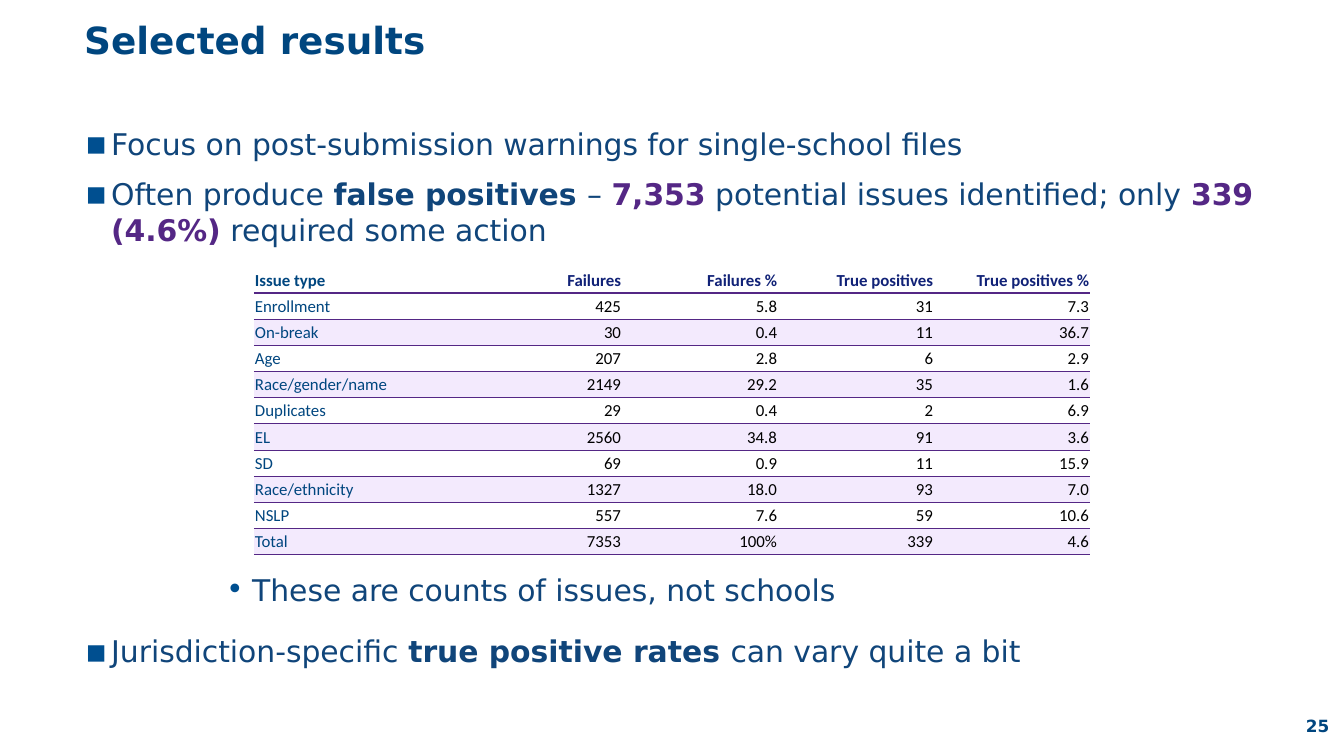
from lxml.etree import SubElement
from pptx import Presentation
from pptx.dml.color import RGBColor
from pptx.enum.text import MSO_ANCHOR, PP_ALIGN
from pptx.oxml.ns import qn
from pptx.util import Pt

PX = 914400 / 134.4
COLORS = {"title": "00467F", "body": "10457A", "accent": "542785", "bullet": "004F90",
          "header": "112277", "number": "000000", "plain": "FFFFFF", "band": "F3EAFD"}
BODY_FONT, TABLE_FONT = "DejaVu Sans", "Calibri"

# Bullet styles: character, size in percent, left indent in px
SQUARE = ("▪", 110, 35)
DOT = ("•", 100, 176)
HANGING = 26

# Each bullet: style, space before in points, runs of (text, bold, colour)
BULLETS = [
    (SQUARE, 0, [("Focus on post-submission warnings for single-school files", False, "body")]),
    (SQUARE, 7.5, [("Often produce ", False, "body"), ("false positives ", True, "body"),
                   ("– ", False, "body"), ("7,353", True, "accent"),
                   (" potential issues identified; only ", False, "body"),
                   ("339 (4.6%)", True, "accent"),
                   (" required some action", False, "body")]),
    (DOT, 174, [("These are counts of issues, not schools", False, "body")]),
    (SQUARE, 13.5, [("Jurisdiction-specific ", False, "body"),
                    ("true positive rates ", True, "body"),
                    ("can vary quite a bit", False, "body")]),
]

ISSUES = [
    ("Issue type", "Failures", "Failures %", "True positives", "True positives %"),
    ("Enrollment", "425", "5.8", "31", "7.3"),
    ("On-break", "30", "0.4", "11", "36.7"),
    ("Age", "207", "2.8", "6", "2.9"),
    ("Race/gender/name", "2149", "29.2", "35", "1.6"),
    ("Duplicates", "29", "0.4", "2", "6.9"),
    ("EL", "2560", "34.8", "91", "3.6"),
    ("SD", "69", "0.9", "11", "15.9"),
    ("Race/ethnicity", "1327", "18.0", "93", "7.0"),
    ("NSLP", "557", "7.6", "59", "10.6"),
    ("Total", "7353", "100%", "339", "4.6"),
]
COLUMN_WIDTHS = [212] + [156] * 4


def px(length):
    return round(length * PX)


def rgb(name):
    return RGBColor.from_string(COLORS[name])


def style(font, size, color, bold=None, name=BODY_FONT):
    font.name, font.size, font.bold = name, Pt(size), bold
    font.color.rgb = rgb(color)


def add_box(page, left, top, width, height, anchor):
    box = page.shapes.add_textbox(px(left), px(top), px(width), px(height))
    frame = box.text_frame
    frame.word_wrap = True
    frame.vertical_anchor = anchor
    return frame


def add_label(frame, text, size):
    para = frame.paragraphs[0]
    para.text = text
    style(para.font, size, "title", True)
    return para


def set_bullet(para, character, percent, indent):
    properties = para._p.get_or_add_pPr()
    properties.set("marL", str(px(indent)))
    properties.set("indent", str(-px(HANGING)))
    color = SubElement(properties, qn("a:buClr"))
    SubElement(color, qn("a:srgbClr"), val=COLORS["bullet"])
    SubElement(properties, qn("a:buSzPct"), val=str(percent * 1000))
    SubElement(properties, qn("a:buFont"), typeface=BODY_FONT)
    SubElement(properties, qn("a:buChar"), char=character)


def add_bullets(frame):
    for index, (bullet, before, spans) in enumerate(BULLETS):
        para = frame.add_paragraph() if index else frame.paragraphs[0]
        set_bullet(para, *bullet)
        para.space_before = Pt(before)
        style(para.font, 16, "body")
        for text, bold, color in spans:
            span = para.add_run()
            span.text = text
            style(span.font, 16, color, bold)


def set_borders(cell, top, bottom):
    """Draw horizontal rules of the given point widths; zero means no line."""
    properties = cell._tc.get_or_add_tcPr()
    for position, (side, width) in enumerate(
            [("lnL", 0), ("lnR", 0), ("lnT", top), ("lnB", bottom)]):
        line = SubElement(properties, qn(f"a:{side}"), w=str(int(Pt(width))))
        properties.insert(position, line)
        if width:
            fill = SubElement(line, qn("a:solidFill"))
            SubElement(fill, qn("a:srgbClr"), val=COLORS["accent"])
        else:
            SubElement(line, qn("a:noFill"))


def fill_cell(cell, text, row, column):
    cell.margin_left = cell.margin_right = cell.margin_top = px(1)
    cell.margin_bottom = 0
    cell.vertical_anchor = MSO_ANCHOR.MIDDLE
    if row:
        cell.fill.solid()
        cell.fill.fore_color.rgb = rgb("plain" if row % 2 else "band")
    else:
        cell.fill.background()
    set_borders(cell, (0, 1, 0.5)[min(row, 2)], 0.5 if row else 1)
    para = cell.text_frame.paragraphs[0]
    para.text = text
    para.alignment = PP_ALIGN.RIGHT if column else PP_ALIGN.LEFT
    color = "title" if column == 0 else "number" if row else "header"
    style(para.font, 9, color, row == 0, TABLE_FONT)


def add_issue_table(page):
    frame = page.shapes.add_table(len(ISSUES), len(COLUMN_WIDTHS), px(254), px(267),
                                  px(sum(COLUMN_WIDTHS)), px(288))
    table = frame.table
    for column, width in zip(table.columns, COLUMN_WIDTHS):
        column.width = px(width)
    for row, values in enumerate(ISSUES):
        for column, text in enumerate(values):
            fill_cell(table.cell(row, column), text, row, column)


def main():
    deck = Presentation()
    deck.slide_width, deck.slide_height = px(1344), px(756)
    page = deck.slides.add_slide(deck.slide_layouts[6])

    title = add_box(page, 71, 0, 1232, 85, MSO_ANCHOR.MIDDLE)
    add_label(title, "Selected results", 20).line_spacing = 0.9
    add_bullets(add_box(page, 63, 119, 1224, 562, MSO_ANCHOR.TOP))
    page_number = add_box(page, 1306, 706, 47, 40, MSO_ANCHOR.MIDDLE)
    page_number.margin_left = 0
    add_label(page_number, "25", 9)
    add_issue_table(page)

    deck.save("out.pptx")


if __name__ == "__main__":
    main()
